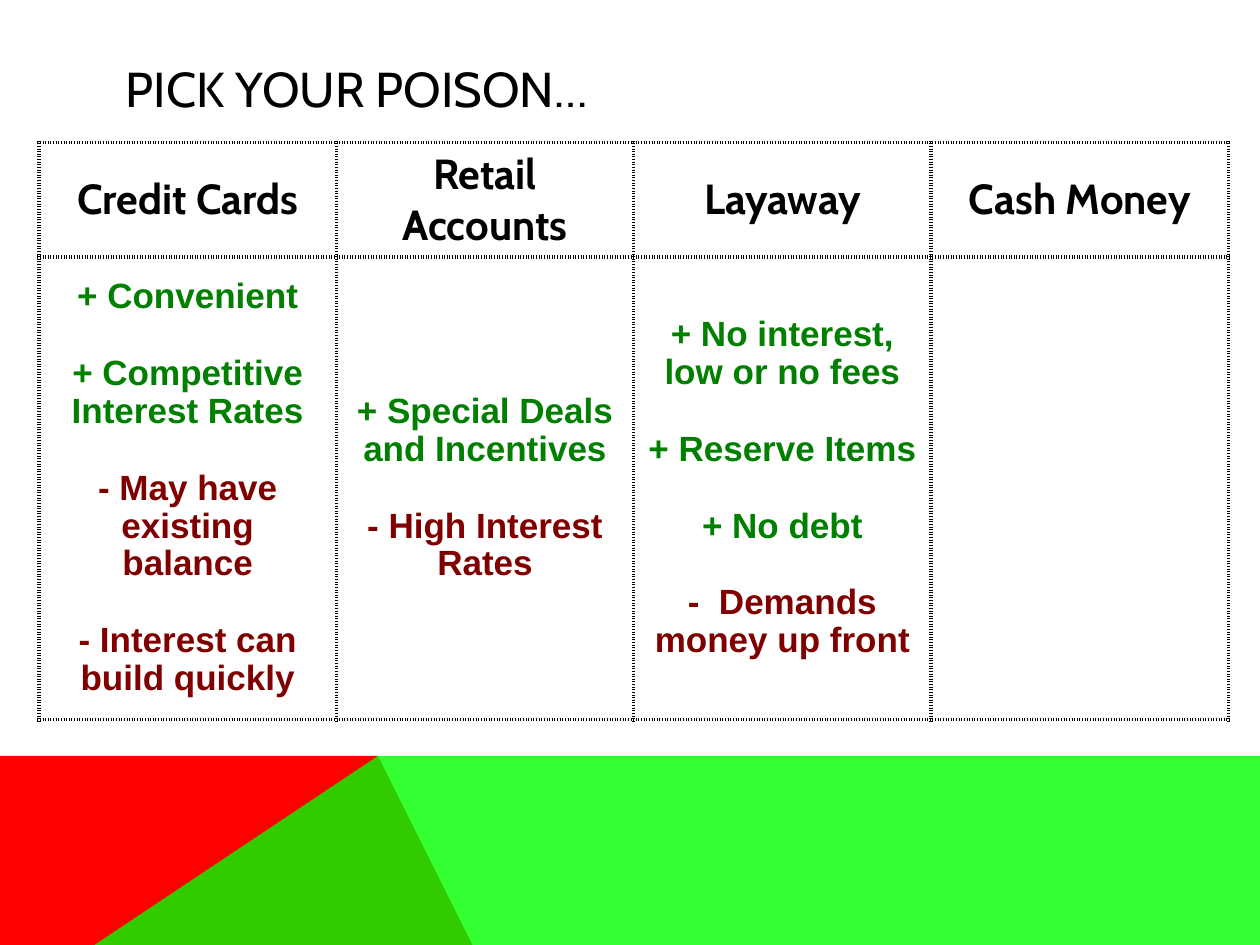
from lxml import etree
from pptx import Presentation
from pptx import util as u
from pptx.dml.color import RGBColor
from pptx.enum import text
from pptx.oxml import ns

WIDE, HIGH = 10, 7.5
BLACK = RGBColor(0, 0, 0)
RED = RGBColor(255, 0, 0)
LIME = RGBColor(0, 255, 0)
PRO = RGBColor(0, 0x7F, 0)
CON = RGBColor(0x80, 0, 0)

LEFT, TOP, COL = 0.31, 1.13, 2.36
ROWS = (0.91, 3.67)
GAP = u.Pt(22.3)
BAND = 6.24

CHOICES = {
    "Credit Cards": ["+ Convenient", "+ Competitive Interest Rates",
                     "- May have existing balance",
                     "- Interest can build quickly"],
    "Retail Accounts": ["+ Special Deals and Incentives",
                        "- High Interest Rates"],
    "Layaway": ["+ No interest, low or no fees", "+ Reserve Items",
                "+ No debt", "-  Demands money up front"],
    "Cash Money": [],
}


def style(para, name, size, color, bold=True):
    font = para.font
    font.name, font.size, font.bold = name, u.Pt(size), bold
    font.color.rgb = color


def add_band(slide, points, color, alpha=None):
    """Draw a filled outline; alpha is its opacity in percent."""
    start, *rest = points
    build = slide.shapes.build_freeform(*start, scale=u.Inches(1))
    build.add_line_segments(rest, close=True)
    band = build.convert_to_shape()
    band.shadow.inherit = False
    band.line.fill.background()
    band.fill.solid()
    band.fill.fore_color.rgb = color
    if alpha:
        tint = band.fill._xPr.find(".//" + ns.qn("a:srgbClr"))
        etree.SubElement(tint, ns.qn("a:alpha"), val=str(alpha * 1000))


def add_title(slide, words):
    box = slide.shapes.add_textbox(*map(u.Inches, (0.9, 0.4, 8.22, 0.6)))
    frame = box.text_frame
    frame.word_wrap = True
    frame.vertical_anchor = text.MSO_ANCHOR.MIDDLE
    frame.text = words
    style(frame.paragraphs[0], "Cabin", 28, BLACK, False)


def add_edges(cell):
    """Give a cell dotted borders on all four sides."""
    props = cell._tc.get_or_add_tcPr()
    for spot, side in enumerate("LRTB"):
        edge = etree.Element(ns.qn("a:ln" + side), w=str(u.Pt(2.25)))
        fill = etree.SubElement(edge, ns.qn("a:solidFill"))
        etree.SubElement(fill, ns.qn("a:srgbClr"), val=str(BLACK))
        etree.SubElement(edge, ns.qn("a:prstDash"), val="dot")
        props.insert(spot, edge)


def fill_cell(cell, lines):
    cell.fill.background()
    add_edges(cell)
    cell.vertical_anchor = text.MSO_ANCHOR.MIDDLE
    cell.text = "\n".join(lines)
    for para in cell.text_frame.paragraphs:
        para.alignment = text.PP_ALIGN.CENTER


def add_choices(slide):
    frame = slide.shapes.add_table(
        len(ROWS), len(CHOICES), u.Inches(LEFT), u.Inches(TOP),
        u.Inches(COL * len(CHOICES)), u.Inches(sum(ROWS)))
    table = frame.table
    table.first_row = table.horz_banding = False
    for row, tall in zip(table.rows, ROWS):
        row.height = u.Inches(tall)
    for col, (name, points) in enumerate(CHOICES.items()):
        table.columns[col].width = u.Inches(COL)
        head, body = table.cell(0, col), table.cell(1, col)
        fill_cell(head, [name])
        style(head.text_frame.paragraphs[0], "Cabin", 24, BLACK)
        fill_cell(body, points)
        for spot, para in enumerate(body.text_frame.paragraphs):
            style(para, "Arial", 20, PRO if para.text.startswith("+") else CON)
            para.line_spacing = 0.97
            if spot:
                para.space_before = GAP


def main():
    deck = Presentation()
    deck.slide_width, deck.slide_height = u.Inches(WIDE), u.Inches(HIGH)
    slide = deck.slides.add_slide(deck.slide_layouts[6])
    add_band(slide, [(0, HIGH), (0, BAND), (2.54, BAND), (4.44, HIGH)], RED)
    add_band(slide, [(0.44, HIGH), (2.57, BAND), (WIDE, BAND), (WIDE, HIGH)],
             LIME, 80)
    add_title(slide, "PICK YOUR POISON…")
    add_choices(slide)
    deck.save("out.pptx")


if __name__ == "__main__":
    main()
